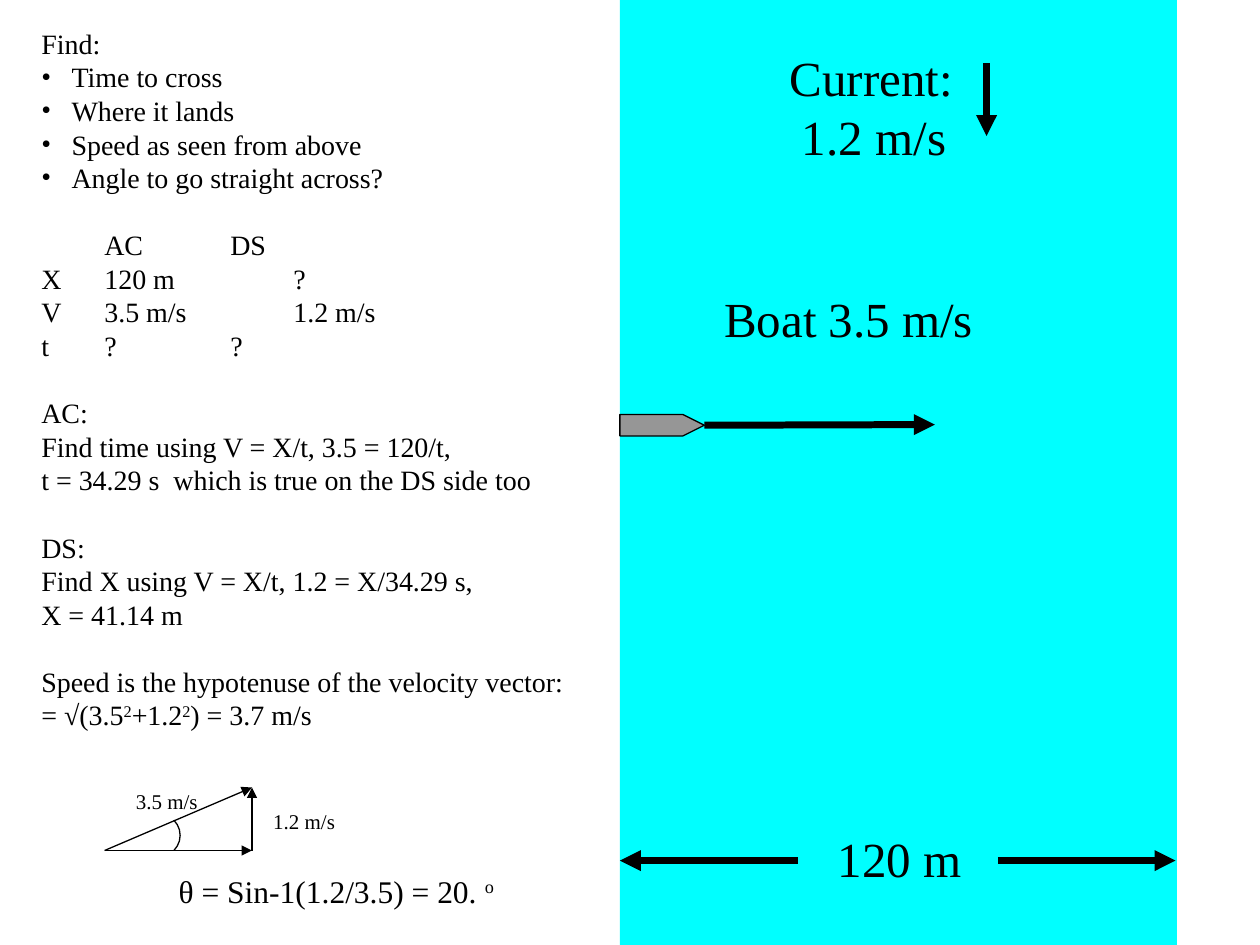
"""Build a slide that solves a boat crossing a river with a current."""
import lxml.etree
import pptx
import pptx.dml.color
import pptx.enum.shapes
import pptx.enum.text
import pptx.oxml.ns
import pptx.util

Inches = pptx.util.Inches
Pt = pptx.util.Pt
SHAPE = pptx.enum.shapes.MSO_SHAPE
qn = pptx.oxml.ns.qn
rgb = pptx.dml.color.RGBColor.from_string

prs = pptx.Presentation()
prs.slide_width, prs.slide_height = Inches(10), Inches(7.5)
s = prs.slides.add_slide(prs.slide_layouts[6])


def add_text(x, y, w, h, size, lines, wrap=False):
    """Add a text box; every second piece between ^ marks is superscript."""
    sp = s.shapes.add_textbox(Inches(x), Inches(y), Inches(w), Inches(h))
    tf = sp.text_frame
    tf.word_wrap = wrap
    tf.auto_size = pptx.enum.text.MSO_AUTO_SIZE.SHAPE_TO_FIT_TEXT
    for i, line in enumerate(lines):
        p = tf.paragraphs[0] if i == 0 else tf.add_paragraph()
        for j, piece in enumerate(line.split("^")):
            if not piece:
                continue
            r = p.add_run()
            r.text = piece
            r.font.name = "Times New Roman"
            r.font.size = Pt(size)
            r.font.color.rgb = rgb("000000")
            if j % 2:
                r.font._element.set("baseline", "30000")
    return tf


def add_arrow(x1, y1, x2, y2, width):
    """Add a straight arrow that points at its second end."""
    sp = s.shapes.add_connector(pptx.enum.shapes.MSO_CONNECTOR.STRAIGHT,
                                Inches(x1), Inches(y1), Inches(x2), Inches(y2))
    sp.line.color.rgb = rgb("000000")
    sp.line.width = Pt(width)
    lxml.etree.SubElement(sp.line._get_or_add_ln(), qn("a:tailEnd"), type="triangle")
    lxml.etree.SubElement(sp._element.spPr, qn("a:effectLst"))
    return sp


river = s.shapes.add_shape(SHAPE.RECTANGLE, Inches(4.92), 0, Inches(4.42), Inches(7.5))
boat = s.shapes.add_shape(SHAPE.PENTAGON, Inches(4.92), Inches(3.29), Inches(0.67), Inches(0.17))
boat.adjustments[0] = 1
angle = s.shapes.add_shape(SHAPE.ARC, Inches(1.09), Inches(6.46), Inches(0.34), Inches(0.34))
angle.rotation = 45

for sp, fill, line in [(river, "00FFFF", None), (boat, "969696", "000000"), (angle, None, "000000")]:
    sp.shadow.inherit = False
    if fill:
        sp.fill.solid()
        sp.fill.fore_color.rgb = rgb(fill)
    else:
        sp.fill.background()
    if line:
        sp.line.color.rgb = rgb(line)
        sp.line.width = Pt(0.75)
    else:
        sp.line.fill.background()

tf = add_text(0.23, 0.16, 4.68, 5.72, 16, [
    "Find:",
    "Time to cross",
    "Where it lands",
    "Speed as seen from above",
    "Angle to go straight across?",
    "\tAC\t\tDS",
    "X\t120 m\t\t?",
    "V\t3.5 m/s\t\t1.2 m/s",
    "t\t?\t\t?",
    "AC:",
    "Find time using V = X/t, 3.5 = 120/t,",
    "t = 34.29 s  which is true on the DS side too",
    "DS:",
    "Find X using V = X/t, 1.2 = X/34.29 s,",
    "X = 41.14 m",
    "Speed is the hypotenuse of the velocity vector:",
    "= √(3.5^2^+1.2^2^) = 3.7 m/s",
], wrap=True)
for p in tf.paragraphs[1:5]:
    pPr = p._p.get_or_add_pPr()
    pPr.set("marL", str(Inches(0.24)))
    pPr.set("indent", str(Inches(-0.24)))
    lxml.etree.SubElement(pPr, qn("a:buFont"), typeface="Times New Roman")
    lxml.etree.SubElement(pPr, qn("a:buChar"), char="•")
for i in (5, 9, 12, 15):
    tf.paragraphs[i].space_before = Pt(19.2)

add_text(6.17, 0.33, 1.5, 1.03, 28, ["Current:", " 1.2 m/s"])
add_text(5.65, 2.24, 2.18, 0.57, 28, ["Boat 3.5 m/s"])
add_text(6.55, 6.53, 1.18, 0.57, 28, ["120 m"])
add_text(0.98, 6.21, 0.69, 0.3, 12, ["3.5 m/s"])
add_text(2.07, 6.37, 0.69, 0.3, 12, ["1.2 m/s"])
add_text(1.32, 6.87, 2.73, 0.4, 18, ["θ = Sin-1(1.2/3.5) = 20. ^o^"])

add_arrow(7.83, 0.5, 7.83, 1.08, 4)
add_arrow(5.59, 3.37, 7.42, 3.37, 4).begin_connect(boat, 3)
add_arrow(6.33, 6.83, 4.92, 6.83, 4)
add_arrow(7.92, 6.83, 9.33, 6.83, 4)
for x1, y1, x2, y2 in [(0.83, 6.75, 2, 6.25), (2, 6.75, 2, 6.25), (0.83, 6.75, 2, 6.75)]:
    add_arrow(x1, y1, x2, y2, 0.75)

prs.save("out.pptx")
